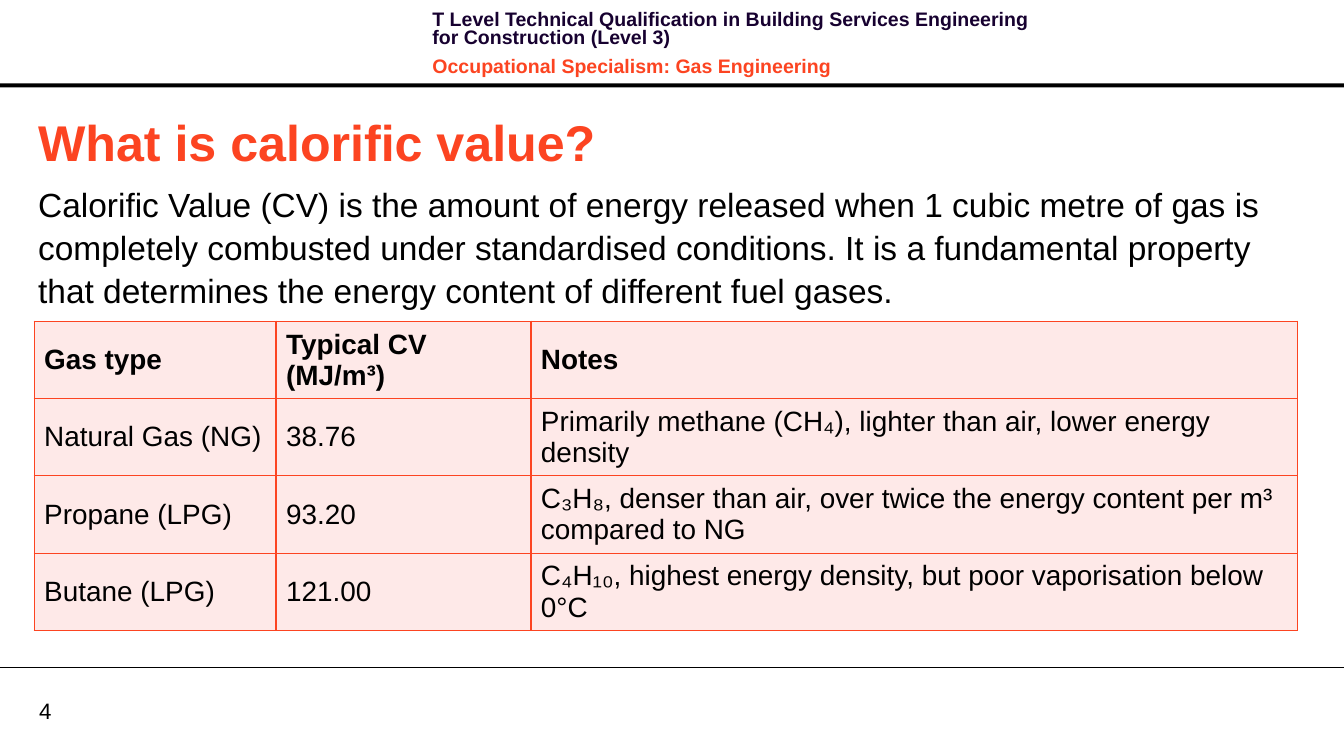
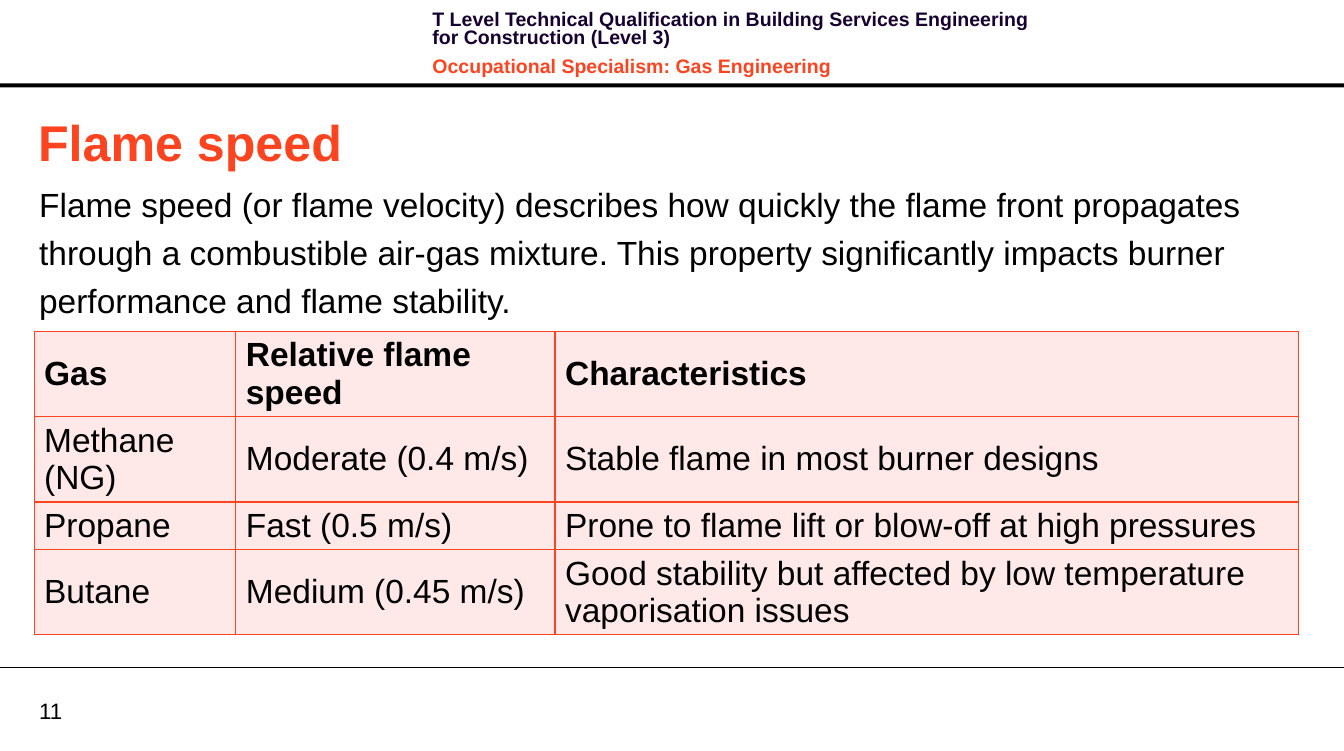
"""Build two gas engineering slides with a shared header, footer and table style."""
from dataclasses import dataclass

from lxml.etree import SubElement
from pptx import Presentation
from pptx.dml.color import RGBColor
from pptx.enum.shapes import MSO_CONNECTOR as Connector
from pptx.enum.shapes import MSO_SHAPE as Shape
from pptx.enum.text import MSO_ANCHOR as Anchor
from pptx.enum.text import MSO_AUTO_SIZE as AutoSize
from pptx.enum.text import PP_ALIGN as Align
from pptx.oxml.ns import qn
from pptx.util import Emu, Pt

PX = 9144
WIDTH, HEIGHT = 1339, 748
FONT = "Arial"
BLACK, NAVY, ORANGE, PINK = "000000", "170130", "FC4421", "FEE9E8"
STANDARD_INSETS = (10, 5, 10, 5)
NO_INSETS = (0, 0, 0, 0)
HEADER_LINES = (
    ("T Level Technical Qualification in Building Services Engineering for Construction (Level 3)", NAVY),
    ("Occupational Specialism: Gas Engineering", ORANGE),
)


@dataclass(frozen=True)
class Box:
    left: int
    top: int
    width: int
    height: int


@dataclass(frozen=True)
class GasTable:
    box: Box
    columns: tuple[int, ...]
    rows: tuple[int, ...]
    size: int
    cells: tuple[tuple[str, ...], ...]


@dataclass(frozen=True)
class Page:
    number: int
    title: str
    body: str
    body_box: Box
    body_insets: tuple[int, ...]
    line_spacing: float
    table: GasTable


PAGES = (
    Page(
        4,
        "What is calorific value?",
        "Calorific Value (CV) is the amount of energy released when 1 cubic metre of gas is completely "
        "combusted under standardised conditions. It is a fundamental property that determines the energy "
        "content of different fuel gases.",
        Box(28, 176, 1260, 131), STANDARD_INSETS, 1.07,
        GasTable(Box(34, 320, 1259, 308), (241, 254, 764), (77, 77, 77, 77), 20, (
            ("Gas type", "Typical CV (MJ/m³)", "Notes"),
            ("Natural Gas (NG)", "38.76", "Primarily methane (CH₄), lighter than air, lower energy density"),
            ("Propane (LPG)", "93.20",
             "C₃H₈, denser than air, over twice the energy content per m³ compared to NG"),
            ("Butane (LPG)", "121.00", "C₄H₁₀, highest energy density, but poor vaporisation below 0°C"),
        )),
    ),
    Page(
        11,
        "Flame speed",
        "Flame speed (or flame velocity) describes how quickly the flame front propagates through a "
        "combustible air-gas mixture. This property significantly impacts burner performance and flame "
        "stability.",
        Box(39, 176, 1272, 453), NO_INSETS, 1.19,
        GasTable(Box(34, 330, 1260, 302), (201, 318, 741), (85, 85, 47, 85), 24, (
            ("Gas", "Relative flame speed", "Characteristics"),
            ("Methane (NG)", "Moderate (0.4 m/s)", "Stable flame in most burner designs"),
            ("Propane", "Fast (0.5 m/s)", "Prone to flame lift or blow-off at high pressures"),
            ("Butane", "Medium (0.45 m/s)",
             "Good stability but affected by low temperature vaporisation issues"),
        )),
    ),
)


def px(length: int) -> Emu:
    """Turn pixels into EMU."""
    return Emu(length * PX)


def colour(value: str) -> RGBColor:
    """Turn a hex string into a colour."""
    return RGBColor.from_string(value)


def extent(box: Box) -> tuple[Emu, ...]:
    """Give the four lengths of a box in EMU."""
    return px(box.left), px(box.top), px(box.width), px(box.height)


def set_values(target, values: dict) -> None:
    """Set each named attribute on the target."""
    for name, value in values.items():
        setattr(target, name, value)


def set_paragraph(para, text: str, size: int, ink: str = BLACK, bold: bool = False, **layout) -> None:
    """Write one formatted span into a paragraph."""
    set_values(para, {"alignment": Align.LEFT, "space_before": Pt(0), "space_after": Pt(0)} | layout)
    span = para.add_run()
    span.text = text
    set_values(span.font, {"name": FONT, "size": Pt(size), "bold": bold})
    span.font.color.rgb = colour(ink)


def set_frame(shape, insets: tuple[int, ...], anchor: Anchor = Anchor.TOP):
    """Prepare the text frame of a shape and return it."""
    left, top, right, bottom = map(px, insets)
    frame = shape.text_frame
    set_values(frame, {
        "word_wrap": True, "auto_size": AutoSize.NONE, "vertical_anchor": anchor,
        "margin_left": left, "margin_top": top, "margin_right": right, "margin_bottom": bottom,
    })
    return frame


def place(shape, box: Box) -> None:
    """Move a placeholder to a box."""
    set_values(shape, dict(zip(("left", "top", "width", "height"), extent(box))))


def draw_furniture(slide, number: int) -> None:
    """Draw the header, both rules and the page number."""
    band = slide.shapes.add_shape(Shape.RECTANGLE, *extent(Box(0, 83, WIDTH, 4)))
    band.shadow.inherit = False
    band.fill.solid()
    band.fill.fore_color.rgb = colour(BLACK)
    band.line.fill.background()

    rule = slide.shapes.add_connector(Connector.STRAIGHT, 0, px(665), px(WIDTH), px(665))
    rule.line.color.rgb = colour(BLACK)
    rule.line.width = Pt(0.75)
    SubElement(rule._element.spPr, qn("a:effectLst"))

    header = set_frame(slide.shapes.add_textbox(*extent(Box(421, 7, 637, 64))), STANDARD_INSETS)
    for index, (text, ink) in enumerate(HEADER_LINES):
        para = header.add_paragraph() if index else header.paragraphs[0]
        set_paragraph(para, text, 14, ink, True, line_spacing=Pt(13.1),
                      space_before=Pt(4 if index else 0), space_after=Pt(4))

    footer = set_frame(slide.shapes.add_textbox(*extent(Box(39, 694, 64, 27))), NO_INSETS, Anchor.MIDDLE)
    set_paragraph(footer.paragraphs[0], str(number), 16)


def draw_text(slide, page: Page) -> None:
    """Fill the title and body placeholders."""
    title, body = slide.shapes.title, slide.placeholders[1]
    place(title, Box(28, 105, 1272, 71))
    heading = set_frame(title, STANDARD_INSETS, Anchor.MIDDLE)
    set_paragraph(heading.paragraphs[0], page.title, 36, ORANGE, True)

    place(body, page.body_box)
    para = set_frame(body, page.body_insets).paragraphs[0]
    properties = para._p.get_or_add_pPr()
    properties.set("marL", "0")
    properties.set("indent", "0")
    SubElement(properties, qn("a:buNone"))
    set_paragraph(para, page.body, 24, line_spacing=page.line_spacing)


def add_borders(cell) -> None:
    """Give a cell an orange line on every side."""
    properties = cell._tc.get_or_add_tcPr()
    for index, side in enumerate(("lnL", "lnR", "lnT", "lnB")):
        line = properties.makeelement(qn(f"a:{side}"), {"w": str(Pt(1))})
        fill = SubElement(line, qn("a:solidFill"))
        SubElement(fill, qn("a:srgbClr"), val=ORANGE)
        properties.insert(index, line)


def draw_table(slide, design: GasTable) -> None:
    """Draw a table with a bold first row."""
    table = slide.shapes.add_table(len(design.rows), len(design.columns), *extent(design.box)).table
    set_values(table, {"first_row": False, "horz_banding": False})
    for column, width in zip(table.columns, design.columns):
        column.width = px(width)
    for row_index, (row, height) in enumerate(zip(table.rows, design.rows)):
        row.height = px(height)
        for cell, text in zip(row.cells, design.cells[row_index]):
            cell.vertical_anchor = Anchor.MIDDLE
            cell.fill.solid()
            cell.fill.fore_color.rgb = colour(PINK)
            add_borders(cell)
            set_paragraph(cell.text_frame.paragraphs[0], text, design.size, bold=row_index == 0)


def main() -> None:
    """Build and save the deck."""
    deck = Presentation()
    set_values(deck, {"slide_width": px(WIDTH), "slide_height": px(HEIGHT)})
    for page in PAGES:
        slide = deck.slides.add_slide(deck.slide_layouts[1])
        draw_furniture(slide, page.number)
        draw_text(slide, page)
        draw_table(slide, page.table)
    deck.save("out.pptx")


if __name__ == "__main__":
    main()
